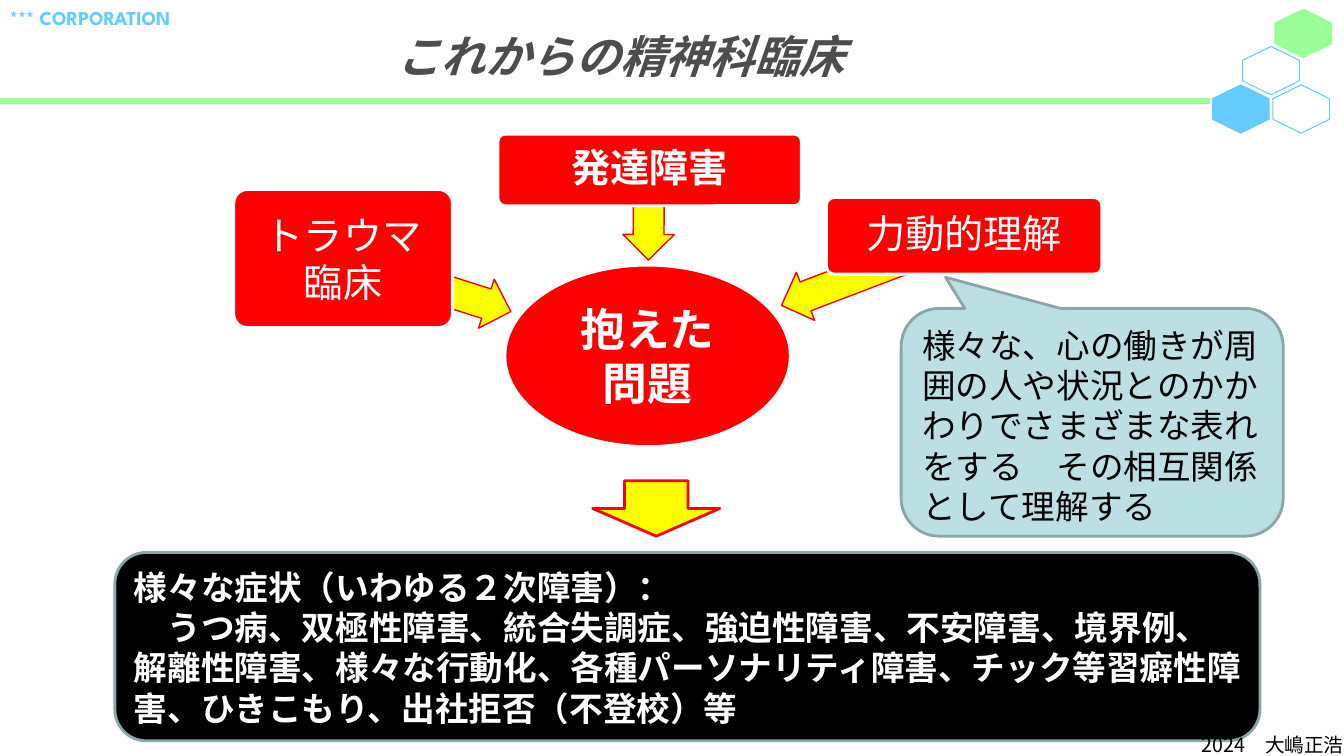
from dataclasses import dataclass

from lxml import etree
from pptx import Presentation
from pptx.dml.color import RGBColor
from pptx.enum.shapes import MSO_CONNECTOR, MSO_SHAPE
from pptx.enum.text import MSO_ANCHOR, MSO_AUTO_SIZE, PP_ALIGN
from pptx.oxml.ns import qn
from pptx.util import Pt

HEXAGON, ELLIPSE = MSO_SHAPE.HEXAGON, MSO_SHAPE.OVAL
ROUNDED, CALLOUT = MSO_SHAPE.ROUNDED_RECTANGLE, MSO_SHAPE.ROUNDED_RECTANGULAR_CALLOUT
LEFT_ARROW, DOWN_ARROW = MSO_SHAPE.LEFT_ARROW, MSO_SHAPE.DOWN_ARROW
STRAIGHT = MSO_CONNECTOR.STRAIGHT
LEFT, CENTER, RIGHT = PP_ALIGN.LEFT, PP_ALIGN.CENTER, PP_ALIGN.RIGHT
TOP, MIDDLE = MSO_ANCHOR.TOP, MSO_ANCHOR.MIDDLE
NO_FIT = MSO_AUTO_SIZE.NONE
TITLE_ONLY = 5


@dataclass(frozen=True)
class Theme:
    body_font: str = "Noto Sans CJK JP"
    brand_font: str = "League Spartan"
    white: str = "FFFFFF"
    black: str = "000000"
    grey: str = "4D4D4D"
    red: str = "FF0000"
    yellow: str = "FFFF00"
    green: str = "99FF99"
    blue: str = "66CCFF"
    pale_teal: str = "BBE0E3"
    teal_edge: str = "8AA6A8"
    title_size: int = 32
    factor_size: int = 28
    body_size: int = 24
    small_size: int = 14


THEME = Theme()


def color(value):
    return RGBColor.from_string(value)


def set_attributes(target, values):
    for name, value in values.items():
        setattr(target, name, value)


def write(shape, lines, size, ink, font=THEME.body_font, align=CENTER, spacing=1.0,
          bold=False, italic=False, **frame_format):
    """Fill a shape with one paragraph per line; a vertical tab breaks a line."""
    frame = shape.text_frame
    set_attributes(frame, {"word_wrap": True, "vertical_anchor": MIDDLE,
                           "auto_size": NO_FIT, **frame_format})
    for index, line in enumerate(lines):
        paragraph = frame.add_paragraph() if index else frame.paragraphs[0]
        paragraph.text = line
        set_attributes(paragraph, {"alignment": align, "line_spacing": spacing})
        for run in paragraph.runs:
            set_attributes(run.font, {"name": font, "size": Pt(size),
                                      "bold": bold, "italic": italic})
            run.font.color.rgb = color(ink)
            east_asian = etree.SubElement(run.font._element, qn("a:ea"))
            east_asian.set("typeface", font)


def margins(side):
    edges = ("margin_left", "margin_top", "margin_right", "margin_bottom")
    return {edge: Pt(side) for edge in edges}


def add_figure(slide, kind, box, fill, edge, weight, adjustments=(), rotation=0):
    figure = slide.shapes.add_shape(kind, *map(Pt, box))
    figure.shadow.inherit = False
    figure.rotation = rotation
    for index, value in enumerate(adjustments):
        figure.adjustments[index] = value
    if fill:
        figure.fill.solid()
        figure.fill.fore_color.rgb = color(fill)
    else:
        figure.fill.background()
    figure.line.color.rgb = color(edge)
    figure.line.width = Pt(weight)
    return figure


def add_label(slide, box, text, **text_format):
    write(slide.shapes.add_textbox(*map(Pt, box)), [text], **text_format)


def add_rule(slide, start, end, ink, weight):
    rule = slide.shapes.add_connector(STRAIGHT, *map(Pt, start + end))
    rule.line.color.rgb = color(ink)
    rule.line.width = Pt(weight)
    etree.SubElement(rule._element.spPr, qn("a:effectLst"))


def add_banner(slide):
    add_label(slide, (0, 0.7, 139, 24.5), "*** CORPORATION", size=THEME.small_size,
              ink=THEME.blue, font=THEME.brand_font, align=LEFT, bold=True,
              word_wrap=False, vertical_anchor=TOP)
    add_rule(slide, (0, 72), (864, 72), THEME.green, 4.5)
    for left, top, fill, edge in (
        (913.7, 3.6, THEME.green, THEME.green),
        (890.6, 30.2, None, THEME.blue),
        (912.2, 57.6, None, THEME.blue),
        (869, 57.6, THEME.blue, THEME.blue),
    ):
        add_figure(slide, HEXAGON, (left, top, 34.5, 40.5), fill, edge, 0.75,
                   (0.288, 1.155), 90)


def place_title(slide, text):
    title = slide.shapes.title
    set_attributes(title, {"left": Pt(217.4), "top": Pt(10.8),
                           "width": Pt(451.4), "height": Pt(46.8)})
    title.fill.solid()
    title.fill.fore_color.rgb = color(THEME.white)
    write(title, [text], THEME.title_size, THEME.grey, bold=True, italic=True,
          margin_top=Pt(14.4))


def add_factor(slide, text, box, arrow_box, arrow_rotation, spacing=0.9, bold=False):
    """Add a contributing factor on top of its arrow to the central problem."""
    add_figure(slide, LEFT_ARROW, arrow_box, THEME.yellow, THEME.red, 1,
               (0.6, 0.5), arrow_rotation)
    factor = add_figure(slide, ROUNDED, box, THEME.red, THEME.white, 2, (0.1,))
    write(factor, [text], THEME.factor_size, THEME.white, spacing=spacing,
          bold=bold, **margins(4.3))


def add_problem(slide):
    problem = add_figure(slide, ELLIPSE, (360.7, 189.4, 203.8, 129.6),
                         THEME.red, THEME.white, 2)
    write(problem, ["抱えた\v問題"], THEME.title_size, THEME.white, bold=True,
          **margins(1.4))


def add_note(slide, kind, box, fill, lines, ink, adjustments=(), bold=False):
    note = add_figure(slide, kind, box, fill, THEME.teal_edge, 2, adjustments)
    write(note, lines, THEME.body_size, ink, align=LEFT, bold=bold,
          vertical_anchor=TOP)


def main():
    deck = Presentation()
    set_attributes(deck, {"slide_width": Pt(960), "slide_height": Pt(540)})
    slide = deck.slides.add_slide(deck.slide_layouts[TITLE_ONLY])

    add_banner(slide)
    place_title(slide, "これからの精神科臨床")

    add_problem(slide)
    add_factor(slide, "トラウマ\v臨床", (167, 135.4, 156.2, 98.6),
               (241.9, 185, 126, 36.7), 197.7, spacing=1.0)
    add_factor(slide, "発達障害", (355.7, 95.8, 216.7, 51.1),
               (431.3, 135.4, 64.1, 36.7), 270.3, bold=True)
    add_factor(slide, "力動的理解", (590.4, 141.1, 196.6, 54.7),
               (553.7, 175, 139.7, 36.7), 339.2)

    add_figure(slide, DOWN_ARROW, (423.4, 343.4, 90.7, 39.6),
               THEME.yellow, THEME.red, 2)
    symptoms = [
        "様々な症状（いわゆる２次障害）：",
        "　うつ病、双極性障害、統合失調症、強迫性障害、不安障害、境界例、"
        "解離性障害、様々な行動化、各種パーソナリティ障害、チック等習癖性障害、"
        "ひきこもり、出社拒否（不登校）等",
    ]
    add_note(slide, ROUNDED, (82.1, 394.6, 817.9, 134.6), THEME.black,
             symptoms, THEME.white, bold=True)
    dynamics = ("様々な、心の働きが周囲の人や状況とのかかわりでさまざまな表れをする　"
                "その相互関係として理解する")
    add_note(slide, CALLOUT, (643.7, 220.3, 272.9, 162.7), THEME.pale_teal,
             [dynamics], THEME.black, (-0.384, -0.637, 0.167))

    add_label(slide, (818.6, 519.8, 148.3, 24.5), "2024　大嶋正浩",
              size=THEME.small_size, ink=THEME.black, align=RIGHT,
              vertical_anchor=TOP)
    deck.save("out.pptx")


if __name__ == "__main__":
    main()
